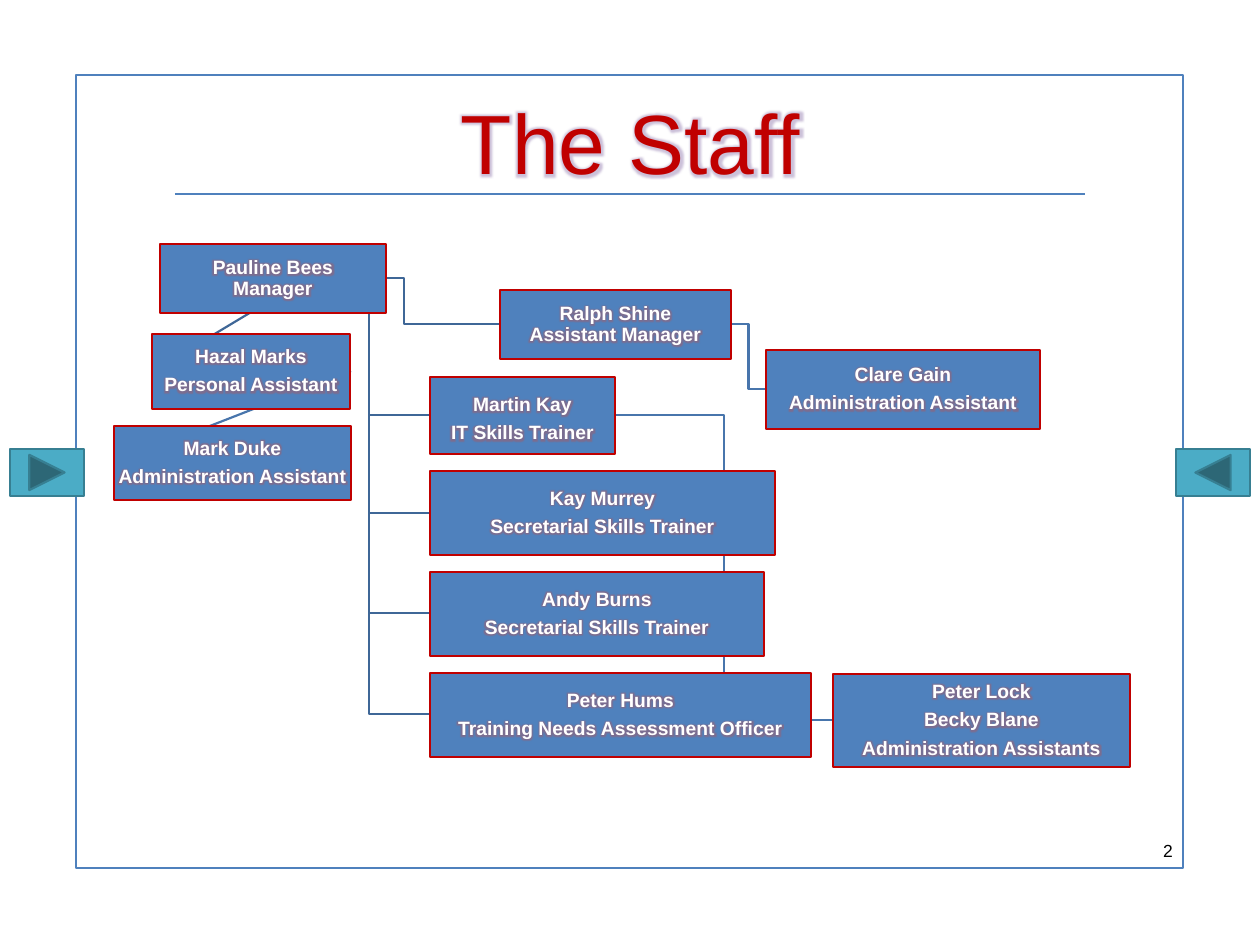
"""Build the staff organisation chart slide."""
from lxml import etree
from pptx import Presentation
from pptx.dml.color import RGBColor
from pptx.enum.shapes import MSO_CONNECTOR, MSO_SHAPE
from pptx.enum.text import MSO_ANCHOR, PP_ALIGN
from pptx.oxml.ns import qn
from pptx.util import Emu, Pt

RECT = MSO_SHAPE.RECTANGLE
NEXT_BUTTON = MSO_SHAPE.ACTION_BUTTON_FORWARD_OR_NEXT
STRAIGHT, ELBOW = MSO_CONNECTOR.STRAIGHT, MSO_CONNECTOR.ELBOW
MIDDLE = MSO_ANCHOR.MIDDLE
CENTER, RIGHT = PP_ALIGN.CENTER, PP_ALIGN.RIGHT

FONT = "Arial"
BLUE, RED, WHITE, BLACK = "4F81BD", "C00000", "FFFFFF", "000000"
TEAL, DARK_TEAL = "4BACC6", "377F92"
LINK, SUB_LINK = "3F6797", "4875AC"
TITLE_GLOW, BOX_GLOW = "8064A2", "C0504D"


def px(n):
    return Emu(round(n * 914400 / 126))


def rgb(color):
    return RGBColor.from_string(color)


class StaffSlide:
    """Hold the style and the current slide."""

    def __init__(self, prs):
        self.s = prs.slides.add_slide(prs.slide_layouts[5])

    def format(self, tf, size, color, align, bold=False, glow=None):
        tf.word_wrap = True
        tf.vertical_anchor = MIDDLE
        for p in tf.paragraphs:
            p.alignment = align
            for r in p.runs:
                r.font.size, r.font.name, r.font.bold = Pt(size), FONT, bold
                r.font.color.rgb = rgb(color)
                if glow:
                    self.glow(r, *glow)

    def glow(self, r, color, radius):
        effects = etree.Element(qn("a:effectLst"))
        halo = etree.SubElement(effects, qn("a:glow"), rad=str(Pt(radius)))
        clr = etree.SubElement(halo, qn("a:srgbClr"), val=color)
        etree.SubElement(clr, qn("a:alpha"), val="40000")
        r.font._element.find(qn("a:solidFill")).addnext(effects)

    def title(self, text, x, y, w, h):
        sp = self.s.shapes.title
        sp.left, sp.top, sp.width, sp.height = map(px, (x, y, w, h))
        sp.text_frame.text = text
        self.format(sp.text_frame, 48, RED, CENTER, glow=(TITLE_GLOW, 5))

    def text(self, text, x, y, w, h):
        sp = self.s.shapes.add_textbox(*map(px, (x, y, w, h)))
        sp.text_frame.text = text
        self.format(sp.text_frame, 10, BLACK, RIGHT)

    def shape(self, kind, x, y, w, h, fill, line, width):
        sp = self.s.shapes.add_shape(kind, *map(px, (x, y, w, h)))
        sp.shadow.inherit = False
        if fill:
            sp.fill.solid()
            sp.fill.fore_color.rgb = rgb(fill)
        else:
            sp.fill.background()
        sp.line.color.rgb = rgb(line)
        sp.line.width = Pt(width)
        return sp

    def staff_box(self, text, x, y, w, h, drop=1):
        tf = self.shape(RECT, x, y, w, h, BLUE, RED, 0.75).text_frame
        tf.margin_left = tf.margin_right = tf.margin_bottom = px(1)
        tf.margin_top = px(drop)
        tf.text = text
        self.format(tf, 11, WHITE, CENTER, True, (BOX_GLOW, 5))
        for p in tf.paragraphs:
            p.line_spacing = 0.9
            p.space_after = Pt(4.3)

    def connector(self, kind, start, end, color):
        c = self.s.shapes.add_connector(kind, *map(px, (*start, *end)))
        c.line.color.rgb = rgb(color)
        c.line.width = Pt(1.25)
        etree.SubElement(c._element.spPr, qn("a:effectLst"))


def main():
    prs = Presentation()
    prs.slide_width, prs.slide_height = px(1260), px(945)
    slide = StaffSlide(prs)

    slide.shape(RECT, 76, 75, 1107, 793, None, BLUE, 1.25)
    for x, turn in ((1176, 180), (10, 0)):
        button = slide.shape(NEXT_BUTTON, x, 449, 74, 47, TEAL, DARK_TEAL, 1.25)
        button.rotation = turn
    slide.title("The Staff", 162, 66, 937, 150)
    slide.text("2", 1131, 831, 54, 39)

    manager = (308, 278)
    for y in (714, 613, 513, 415):
        slide.connector(ELBOW, manager, (430, y), LINK)
    slide.connector(ELBOW, manager, (500, 324), LINK)
    slide.connector(ELBOW, (615, 415), (833, 720), SUB_LINK)
    slide.connector(ELBOW, (731, 324), (766, 389), SUB_LINK)
    slide.connector(STRAIGHT, (351, 371), (115, 463), SUB_LINK)
    slide.connector(STRAIGHT, manager, (153, 371), LINK)

    slide.staff_box("Pauline Bees\vManager", 160, 244, 226, 69)
    slide.staff_box("Hazal Marks\nPersonal Assistant", 152, 334, 198, 75)
    slide.staff_box("Mark Duke\nAdministration Assistant", 114, 426, 237, 74)
    slide.staff_box("Ralph Shine\vAssistant Manager", 500, 290, 231, 69)
    slide.staff_box("Clare Gain\nAdministration Assistant", 766, 350, 274, 79)
    slide.staff_box("Martin Kay\nIT Skills Trainer", 430, 377, 185, 77, drop=9)
    slide.staff_box("Peter Lock\nBecky Blane\nAdministration Assistants",
                    833, 674, 297, 93)
    trainers = (
        ("Kay Murrey\nSecretarial Skills Trainer", 345),
        ("Andy Burns\nSecretarial Skills Trainer", 334),
        ("Peter Hums\nTraining Needs Assessment Officer", 381),
    )
    for i, (text, width) in enumerate(trainers):
        slide.staff_box(text, 430, 471 + 101 * i, width, 84)

    slide.connector(STRAIGHT, (175, 194), (1085, 194), BLUE)
    prs.save("out.pptx")


if __name__ == "__main__":
    main()
